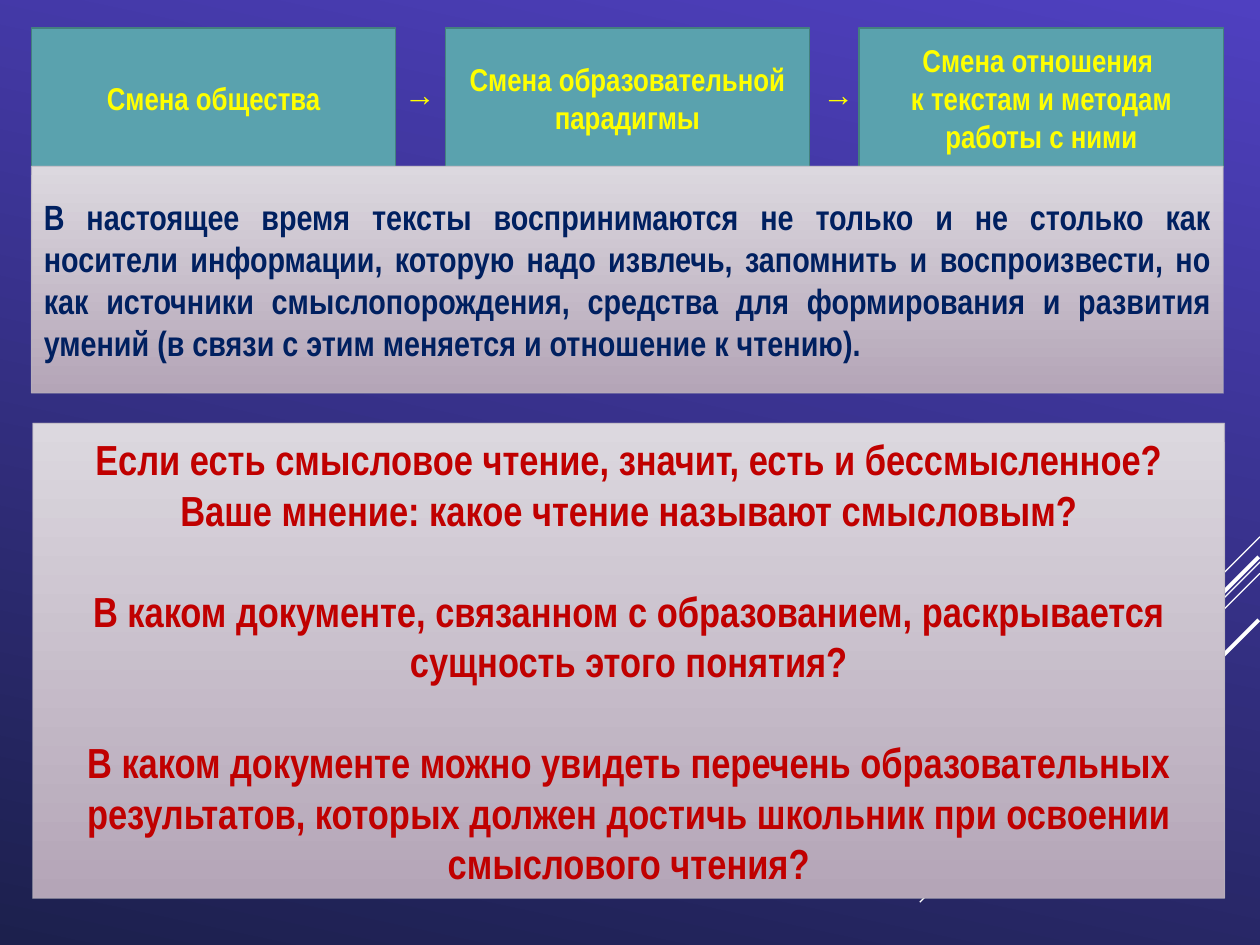
from lxml.etree import SubElement
from pptx import Presentation
from pptx.dml.color import RGBColor
from pptx.enum.shapes import MSO_CONNECTOR, MSO_SHAPE
from pptx.enum.text import MSO_ANCHOR, MSO_AUTO_SIZE, PP_ALIGN
from pptx.oxml import parse_xml
from pptx.oxml.ns import nsdecls, qn
from pptx.util import Inches, Pt

WHITE = RGBColor(0xFF, 0xFF, 0xFF)
YELLOW = RGBColor(0xFF, 0xFF, 0x00)
AMBER = RGBColor(0xFF, 0xC0, 0x00)
NAVY = RGBColor(0x00, 0x20, 0x60)
RED = RGBColor(0xC0, 0x00, 0x00)
CRIMSON = RGBColor(0x99, 0x00, 0x33)
TEAL = RGBColor(0x5A, 0xA2, 0xAE)
TEAL_EDGE = RGBColor(0x43, 0x81, 0x7E)
PANEL_EDGE = RGBColor(0xB8, 0xB3, 0xBD)
PANEL_COLORS = RGBColor(0xDC, 0xD8, 0xDF), RGBColor(0xB4, 0xA5, 0xB7)
BACKGROUND_COLORS = RGBColor(0x4F, 0x40, 0xC0), RGBColor(0x1C, 0x20, 0x4D)


def fill_gradient(fill, colors, angle):
    """Two-stop gradient; the angle runs clockwise."""
    fill.gradient()
    fill.gradient_angle = 360 - angle
    for stop, position, color in zip(fill.gradient_stops, (0, 1), colors):
        stop.position = position
        stop.color.rgb = color


def write_text(shape, paragraphs, size, color, align, outline=None, gap=0):
    frame = shape.text_frame
    frame.text = "\n".join(paragraphs)
    frame.vertical_anchor = MSO_ANCHOR.MIDDLE
    for index, paragraph in enumerate(frame.paragraphs):
        paragraph.alignment = align
        paragraph.space_before = Pt(gap if index else 0)
        font = paragraph.font
        font.name, font.size, font.bold = "Arial Narrow", Pt(size), True
        font.color.rgb = color
        if outline is not None:
            for run in paragraph.runs:
                run.font._element.insert(0, parse_xml(
                    f'<a:ln {nsdecls("a")} w="{Pt(0.8)}"><a:solidFill>'
                    f'<a:srgbClr val="{outline}"/></a:solidFill></a:ln>'))


presentation = Presentation()
presentation.slide_width, presentation.slide_height = Inches(10), Inches(7.5)
slide = presentation.slides.add_slide(presentation.slide_layouts[6])
shapes = slide.shapes
fill_gradient(slide.background.fill, BACKGROUND_COLORS, 102)

# Diagonal strokes at 45 degrees: right end, top, run, weight
for right, top, run, weight in [
    (10, 4.26, 0.83, 0.75),
    (10, 4.46, 2.7, 0.75),
    (10, 4.55, 1.72, 0.75),
    (9.99, 4.42, 1.57, 2.25),
    (9.99, 4.92, 1.14, 2.25),
]:
    stroke = shapes.add_connector(
        MSO_CONNECTOR.STRAIGHT, Inches(right), Inches(top),
        Inches(right - run), Inches(top + run))
    stroke.line.color.rgb = WHITE
    stroke.line.width = Pt(weight)
    SubElement(stroke._element.spPr, qn("a:effectLst"))

# Chain of changes: three boxes on an even step
LEFT, STEP, BOX_WIDTH = 0.25, 3.285, 2.89
chain = [
    ["Смена общества"],
    ["Смена образовательной парадигмы"],
    ["Смена отношения ", "к текстам и методам работы с ними"],
]
for column, paragraphs in enumerate(chain):
    box = shapes.add_shape(
        MSO_SHAPE.RECTANGLE, Inches(LEFT + column * STEP), Inches(0.22),
        Inches(BOX_WIDTH), Inches(1.11))
    box.shadow.inherit = False
    box.fill.solid()
    box.fill.fore_color.rgb = TEAL
    box.line.color.rgb = TEAL_EDGE
    box.line.width = Pt(1)
    write_text(box, paragraphs, 18, YELLOW, PP_ALIGN.CENTER, AMBER)

# Arrows in the gaps
for left in (3.11, 6.43):
    arrow = shapes.add_textbox(Inches(left), Inches(0.58), Inches(0.45), Inches(0.4))
    write_text(arrow, ["→"], 18, YELLOW, PP_ALIGN.LEFT, AMBER)
    arrow.text_frame.vertical_anchor = MSO_ANCHOR.TOP
    arrow.text_frame.word_wrap = False
    arrow.text_frame.auto_size = MSO_AUTO_SIZE.SHAPE_TO_FIT_TEXT

# Statement and questions panels
statement = [
    "В настоящее время тексты воспринимаются не только и не столько как "
    "носители информации, которую надо извлечь, запомнить и воспроизвести, но "
    "как источники смыслопорождения, средства для формирования и развития "
    "умений (в связи с этим меняется и отношение к чтению).",
]
questions = [
    "Если есть смысловое чтение, значит, есть и бессмысленное? "
    "Ваше мнение: какое чтение называют смысловым?",
    "В каком документе, связанном с образованием, раскрывается "
    "сущность этого понятия?",
    "В каком документе можно увидеть перечень образовательных "
    "результатов, которых должен достичь школьник при освоении "
    "смыслового чтения?",
]
for left, top, height, text_settings in [
    (0.25, 1.32, 1.8, (statement, 20, NAVY, PP_ALIGN.JUSTIFY)),
    (0.26, 3.36, 3.77, (questions, 24, RED, PP_ALIGN.CENTER, CRIMSON, 29)),
]:
    panel = shapes.add_shape(
        MSO_SHAPE.RECTANGLE, Inches(left), Inches(top), Inches(9.46), Inches(height))
    panel.shadow.inherit = False
    fill_gradient(panel.fill, PANEL_COLORS, 90)
    panel.line.color.rgb = PANEL_EDGE
    panel.line.width = Pt(0.75)
    edge_color = panel.line._ln.find(".//" + qn("a:srgbClr"))
    SubElement(edge_color, qn("a:alpha")).set("val", "60000")
    write_text(panel, *text_settings)

presentation.save("out.pptx")
